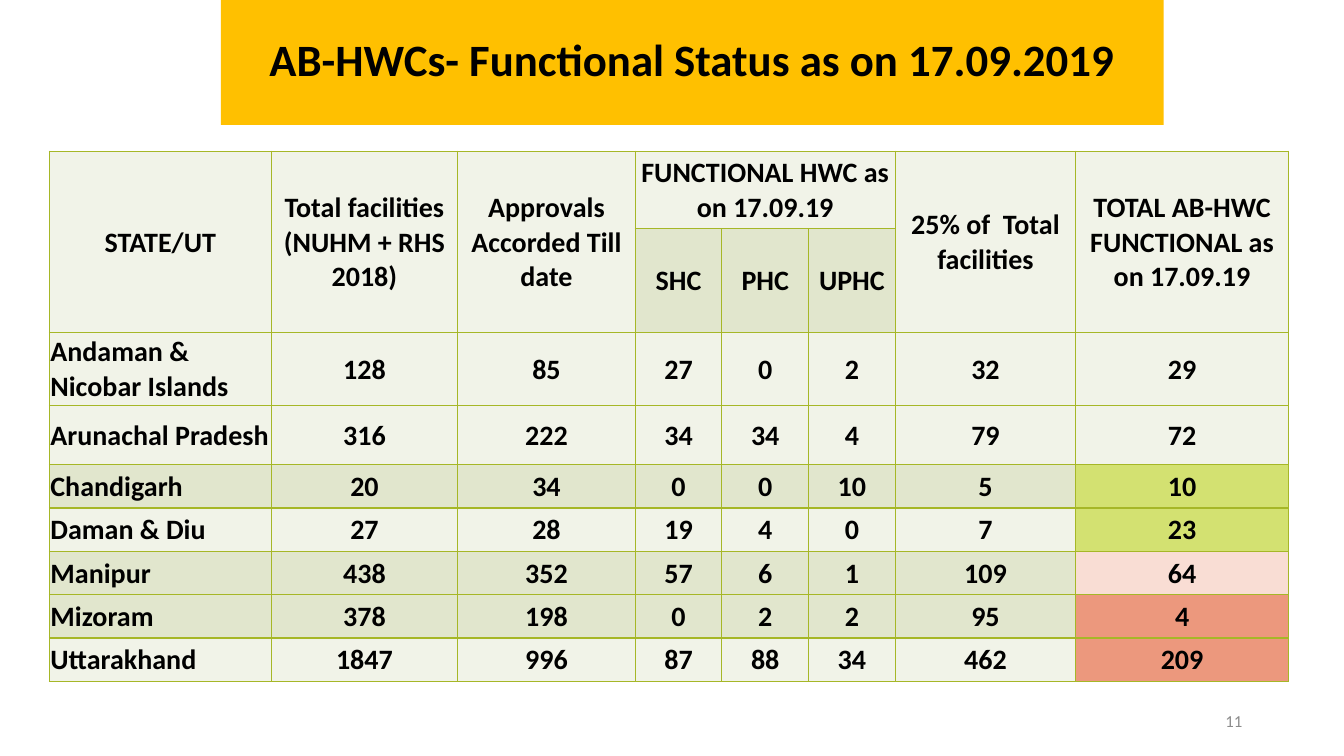
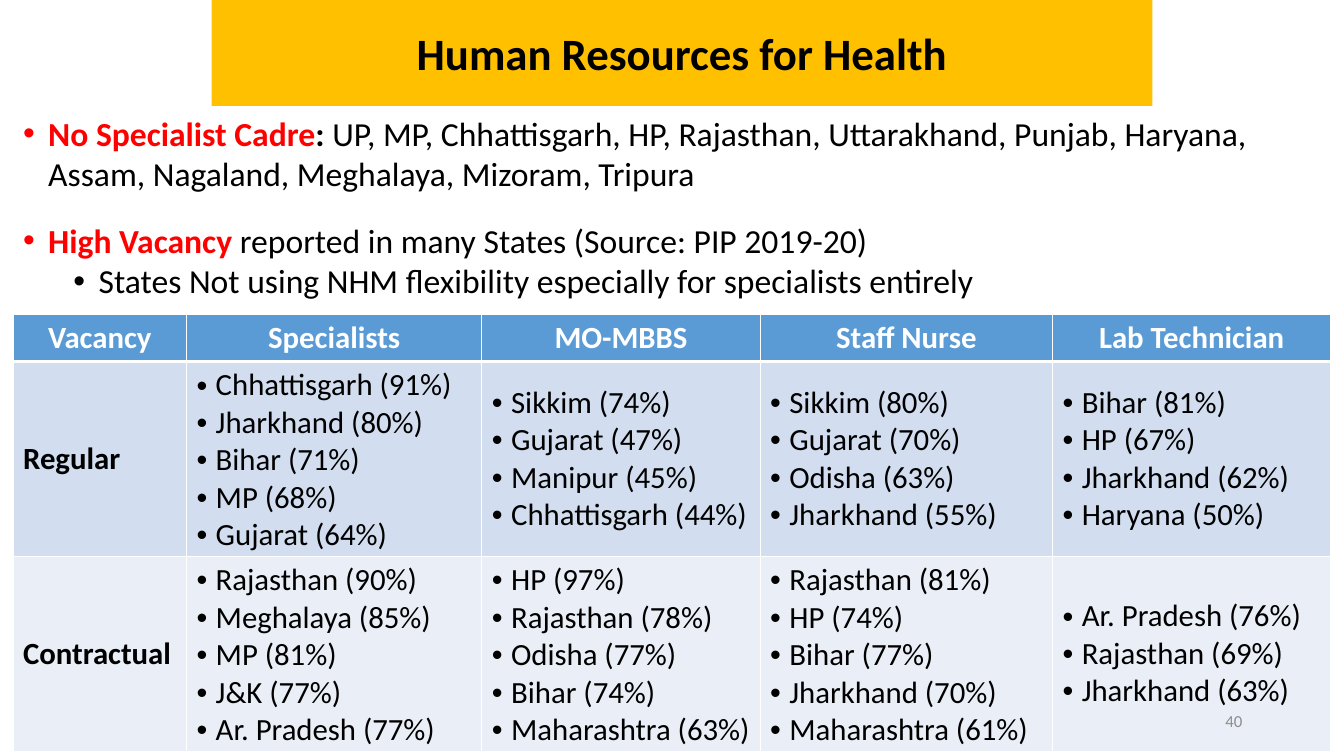
import pptx
import pptx.util
import pptx.dml.color
import pptx.enum.shapes
import pptx.enum.text
import pptx.oxml
import pptx.oxml.ns

RGB = pptx.dml.color.RGBColor
ALIGN = pptx.enum.text.PP_ALIGN
MIDDLE = pptx.enum.text.MSO_ANCHOR.MIDDLE
TOP = pptx.enum.text.MSO_ANCHOR.TOP

FONT = "Calibri"
EMU_PER_PX = 9144  # 100 px to the inch

BLACK = RGB(0x00, 0x00, 0x00)
WHITE = RGB(0xFF, 0xFF, 0xFF)
RED = RGB(0xFF, 0x00, 0x00)
GRAY = RGB(0x8C, 0x8C, 0x8C)
BAND = RGB(0xFF, 0xC0, 0x00)
OLIVE = RGB(0xA6, 0xB7, 0x27)
OLIVE_PALE = RGB(0xF1, 0xF3, 0xE8)
OLIVE_TINT = RGB(0xE1, 0xE6, 0xCD)
ON_TARGET = RGB(0xD3, 0xE1, 0x71)
BEHIND = RGB(0xF9, 0xDD, 0xD4)
FAR_BEHIND = RGB(0xEC, 0x98, 0x7D)
BLUE = RGB(0x5B, 0x9B, 0xD5)
BLUE_TINT = RGB(0xD2, 0xDE, 0xEF)
BLUE_PALE = RGB(0xEA, 0xEF, 0xF7)

PAGE_NUMBER_BOX = (942, 695, 300, 40)

STATUS_COLUMNS = [220, 185, 176, 86, 86, 86, 179, 211]
STATUS_ROWS = [77, 79, 72, 59] + [43] * 5
# label, row, column, rows spanned, columns spanned
STATUS_HEADINGS = [
    ("STATE/UT", 0, 0, 2, 1),
    ("Total facilities (NUHM + RHS 2018)", 0, 1, 2, 1),
    ("Approvals Accorded Till date", 0, 2, 2, 1),
    ("FUNCTIONAL HWC as on 17.09.19", 0, 3, 1, 3),
    ("25% of  Total facilities", 0, 6, 2, 1),
    ("TOTAL AB-HWC FUNCTIONAL as on 17.09.19", 0, 7, 2, 1),
    ("SHC", 1, 3, 1, 1),
    ("PHC", 1, 4, 1, 1),
    ("UPHC", 1, 5, 1, 1),
]
# state, facilities, approvals, SHC, PHC, UPHC, quarter of facilities, row fill
STATUS = [
    ("Andaman & Nicobar Islands", 128, 85, 27, 0, 2, 32, OLIVE_PALE),
    ("Arunachal Pradesh", 316, 222, 34, 34, 4, 79, OLIVE_PALE),
    ("Chandigarh", 20, 34, 0, 0, 10, 5, OLIVE_TINT),
    ("Daman & Diu", 27, 28, 19, 4, 0, 7, OLIVE_PALE),
    ("Manipur", 438, 352, 57, 6, 1, 109, OLIVE_TINT),
    ("Mizoram", 378, 198, 0, 2, 2, 95, OLIVE_TINT),
    ("Uttarakhand", 1847, 996, 87, 88, 34, 462, OLIVE_PALE),
]

VACANCY_COLUMNS = [172, 293, 276, 290, 276]
VACANCY_ROWS = [46, 191, 188]
VACANCY_HEADINGS = ["Vacancy", "Specialists", "MO-MBBS", "Staff Nurse", "Lab Technician"]
VACANCIES = [
    ("Regular", BLUE_TINT, [
        [("Chhattisgarh", 91), ("Jharkhand", 80), ("Bihar", 71), ("MP", 68), ("Gujarat", 64)],
        [("Sikkim", 74), ("Gujarat", 47), ("Manipur", 45), ("Chhattisgarh", 44)],
        [("Sikkim", 80), ("Gujarat", 70), ("Odisha", 63), ("Jharkhand", 55)],
        [("Bihar", 81), ("HP", 67), ("Jharkhand", 62), ("Haryana", 50)],
    ]),
    ("Contractual", BLUE_PALE, [
        [("Rajasthan", 90), ("Meghalaya", 85), ("MP", 81), ("J&K", 77), ("Ar. Pradesh", 77)],
        [("HP", 97), ("Rajasthan", 78), ("Odisha", 77), ("Bihar", 74), ("Maharashtra", 63)],
        [("Rajasthan", 81), ("HP", 74), ("Bihar", 77), ("Jharkhand", 70), ("Maharashtra", 61)],
        [("Ar. Pradesh", 76), ("Rajasthan", 69), ("Jharkhand", 63)],
    ]),
]


def px(length):
    return pptx.util.Emu(length * EMU_PER_PX)


def px_box(box):
    return [px(length) for length in box]


def write_line(frame, text, size, color=BLACK, bold=False, align=ALIGN.LEFT,
               level=0, bullet_at=None, hang=0, before=0, line_spacing=None):
    """Add a paragraph; text is a string or a list of (text, color, bold) runs."""
    paragraph = frame.paragraphs[0]
    if paragraph.runs:
        paragraph = frame.add_paragraph()
    paragraph.alignment = align
    paragraph.level = level
    paragraph.space_before = pptx.util.Pt(before)
    if line_spacing:
        paragraph.line_spacing = line_spacing
    runs = [(text, color, bold)] if isinstance(text, str) else text
    for words, run_color, run_bold in runs:
        run = paragraph.add_run()
        run.text = words
        run.font.name = FONT
        run.font.size = pptx.util.Pt(size)
        run.font.bold = run_bold
        run.font.color.rgb = run_color
    if bullet_at is not None:
        properties = paragraph._p.get_or_add_pPr()
        properties.set("marL", str(px(bullet_at + hang)))
        properties.set("indent", str(px(-hang)))
        namespace = pptx.oxml.ns.nsdecls("a")
        properties.append(pptx.oxml.parse_xml(f'<a:buFont {namespace} typeface="Arial"/>'))
        properties.append(pptx.oxml.parse_xml(f'<a:buChar {namespace} char="•"/>'))


def add_title_band(slide, box, title, line_spacing=None):
    band = slide.shapes.add_shape(pptx.enum.shapes.MSO_SHAPE.RECTANGLE, *px_box(box))
    band.shadow.inherit = False
    band.fill.solid()
    band.fill.fore_color.rgb = BAND
    band.line.fill.background()
    band.text_frame.vertical_anchor = MIDDLE
    write_line(band.text_frame, title, 32, bold=True, align=ALIGN.CENTER,
               line_spacing=line_spacing)


def add_text_frame(slide, box, anchor=TOP):
    frame = slide.shapes.add_textbox(*px_box(box)).text_frame
    frame.word_wrap = True
    frame.vertical_anchor = anchor
    return frame


def add_page_number(slide, number):
    frame = add_text_frame(slide, PAGE_NUMBER_BOX, MIDDLE)
    write_line(frame, str(number), 12, color=GRAY, align=ALIGN.RIGHT)


def add_grid(slide, left, top, columns, rows):
    box = (left, top, sum(columns), sum(rows))
    grid = slide.shapes.add_table(len(rows), len(columns), *px_box(box)).table
    for column, width in zip(grid.columns, columns):
        column.width = px(width)
    for row, height in zip(grid.rows, rows):
        row.height = px(height)
    return grid


def style_cell(cell, fill, border, bottom=1, anchor=MIDDLE, tight=False):
    """Set fill, borders (bottom width in points) and anchor; tight drops the margins."""
    cell.fill.solid()
    cell.fill.fore_color.rgb = fill
    cell.vertical_anchor = anchor
    if tight:
        cell.margin_left = cell.margin_right = cell.margin_top = px(1)
        cell.margin_bottom = 0
    widths = {"lnL": 1, "lnR": 1, "lnT": 1, "lnB": bottom}
    for position, (edge, width) in enumerate(widths.items()):
        line = pptx.oxml.parse_xml(
            f'<a:{edge} {pptx.oxml.ns.nsdecls("a")} w="{pptx.util.Pt(width)}">'
            f'<a:solidFill><a:srgbClr val="{border}"/></a:solidFill></a:{edge}>')
        cell._tc.get_or_add_tcPr().insert(position, line)


def total_fill(total, target, row_fill):
    """Colour a total by the share of its target that is reached."""
    share = total / target
    if share >= 1:
        return ON_TARGET
    if share >= 0.9:
        return row_fill
    return BEHIND if share >= 0.5 else FAR_BEHIND


def add_status_table(slide, left, top):
    grid = add_grid(slide, left, top, STATUS_COLUMNS, STATUS_ROWS)
    for row, fill in enumerate([OLIVE_PALE, OLIVE_TINT]):
        for column in range(len(STATUS_COLUMNS)):
            style_cell(grid.cell(row, column), fill, OLIVE, tight=True)
    for label, row, column, height, width in STATUS_HEADINGS:
        cell = grid.cell(row, column)
        if height * width > 1:
            cell.merge(grid.cell(row + height - 1, column + width - 1))
        write_line(cell.text_frame, label, 20, bold=True, align=ALIGN.CENTER)
    for row, (*values, row_fill) in enumerate(STATUS, start=2):
        total = sum(values[3:6])
        fills = [row_fill] * len(values) + [total_fill(total, values[6], row_fill)]
        for column, (value, fill) in enumerate(zip(values + [total], fills)):
            cell = grid.cell(row, column)
            style_cell(cell, fill, OLIVE, tight=True)
            write_line(cell.text_frame, str(value), 20, bold=True,
                       align=ALIGN.CENTER if column else ALIGN.LEFT)


def add_vacancy_table(slide, left, top):
    grid = add_grid(slide, left, top, VACANCY_COLUMNS, VACANCY_ROWS)
    for column, heading in enumerate(VACANCY_HEADINGS):
        cell = grid.cell(0, column)
        style_cell(cell, BLUE, WHITE, bottom=3, anchor=TOP)
        write_line(cell.text_frame, heading, 22, color=WHITE, bold=True, align=ALIGN.CENTER)
    for row, (posting, fill, posts) in enumerate(VACANCIES, start=1):
        for column in range(len(VACANCY_COLUMNS)):
            style_cell(grid.cell(row, column), fill, WHITE)
        write_line(grid.cell(row, 0).text_frame, posting, 22, bold=True)
        for column, states in enumerate(posts, start=1):
            for state, percent in states:
                write_line(grid.cell(row, column).text_frame, f"{state} ({percent}%)", 22,
                           bullet_at=0, hang=19)


def add_findings(slide, box):
    frame = add_text_frame(slide, box)
    cadre_states = ("UP, MP, Chhattisgarh, HP, Rajasthan, Uttarakhand, Punjab, Haryana, "
                    "Assam, Nagaland, Meghalaya, Mizoram, Tripura")
    write_line(frame, [("No Specialist Cadre", RED, True), (": ", BLACK, True),
                       (cadre_states, BLACK, False)], 24, bullet_at=0, hang=25)
    write_line(frame, [("High Vacancy ", RED, True),
                       ("reported in many States (Source: PIP 2019-20)", BLACK, False)],
               24, bullet_at=0, hang=25, before=19)
    write_line(frame, "States Not using NHM flexibility especially for specialists entirely",
               24, level=1, bullet_at=50, hang=25)


def build_status_slide(slide):
    add_title_band(slide, (219, 0, 935, 124),
                   "AB-HWCs- Functional Status as on 17.09.2019", line_spacing=0.9)
    add_status_table(slide, 49, 150)
    add_page_number(slide, 11)


def build_workforce_slide(slide):
    add_title_band(slide, (210, 0, 933, 105), "Human Resources for Health")
    add_findings(slide, (13, 107, 1299, 205))
    add_vacancy_table(slide, 13, 312)
    add_page_number(slide, 40)


def main():
    deck = pptx.Presentation()
    deck.slide_width, deck.slide_height = px(1333), px(750)
    blank = deck.slide_layouts[6]
    for build in (build_status_slide, build_workforce_slide):
        build(deck.slides.add_slide(blank))
    deck.save("out.pptx")


if __name__ == "__main__":
    main()
